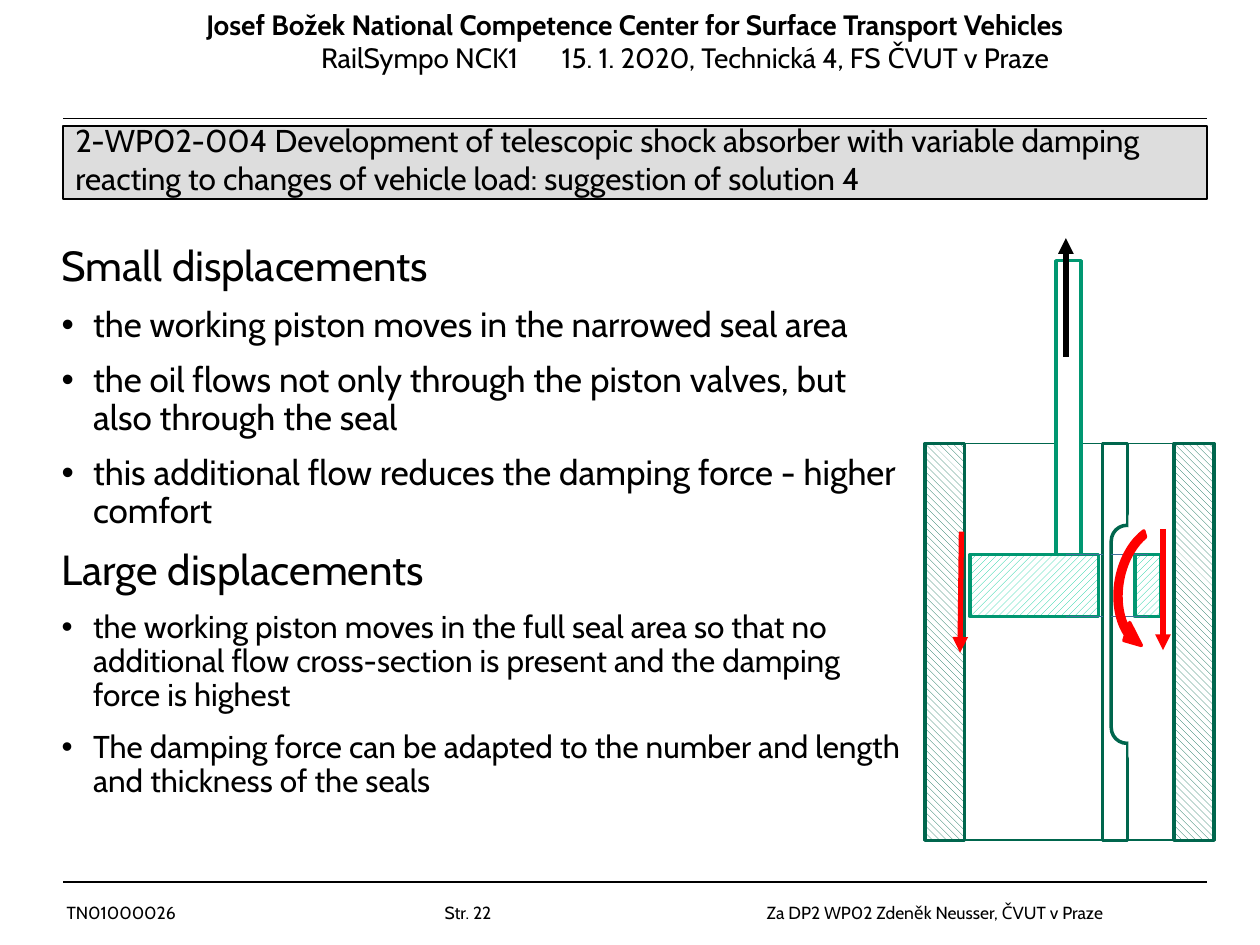
"""Build the slide on a telescopic shock absorber with variable damping."""
from lxml.etree import SubElement
from pptx import Presentation
from pptx.dml.color import RGBColor
from pptx.enum.dml import MSO_PATTERN as Pattern
from pptx.enum.shapes import MSO_CONNECTOR as Connector, MSO_SHAPE as Shape
from pptx.oxml.ns import qn
from pptx.util import Pt

FONT = "Cabin"
COLORS = {
    "black": "000000", "white": "FFFFFF", "bar": "DDDDDD", "wall": "00664D",
    "piston": "009771", "hatch": "00CC99", "edge": "41719C", "flow": "FF0000",
}
HATCHES = {
    "wall hatch": (Pattern.WIDE_DOWNWARD_DIAGONAL, "wall"),
    "piston hatch": (Pattern.WIDE_UPWARD_DIAGONAL, "hatch"),
}

HEADER = [
    dict(text="Josef Božek National Competence Center for Surface Transport Vehicles",
         size=16, bold=True, align="ctr"),
    dict(text="\tRailSympo NCK1\t15. 1. 2020, Technická 4, FS ČVUT v Praze",
         size=16, tabs=(119.5, 257)),
]
TITLE = [dict(text="2-WP02-004 Development of telescopic shock absorber with variable damping "
                   "reacting to changes of vehicle load: suggestion of solution 4", size=18)]
FOOTER = [dict(text="TN01000026\tStr. 22\tZa DP2 WP02 Zdeněk Neusser, ČVUT v Praze",
               size=10, tabs=(216, 400))]
SECTIONS = [
    ("Small displacements", 20, [
        "the working piston moves in the narrowed seal area",
        "the oil flows not only through the piston valves, but also through the seal",
        "this additional flow reduces the damping force - higher comfort",
    ]),
    ("Large displacements", 18, [
        "the working piston moves in the full seal area so that no additional flow "
        "cross-section is present and the damping force is highest",
        "The damping force can be adapted to the number and length and thickness of the seals",
    ]),
]

CYLINDER_TOP, CYLINDER_HEIGHT = 253.4, 226.8
CYLINDER_BOTTOM = CYLINDER_TOP + CYLINDER_HEIGHT
PISTON_TOP, PISTON_HEIGHT = 316.8, 35.5
PISTON_BOTTOM = PISTON_TOP + PISTON_HEIGHT
WALLS = [(left, CYLINDER_TOP, 22.7, CYLINDER_HEIGHT) for left in (671, 528.5)]
PISTON_EDGES = [((left, y), (left + 20.9, y))
                for left in (635, 609.1) for y in (PISTON_TOP, PISTON_BOTTOM)]
ARROWS = [
    ((609.1, 203.8), (609.1, 136.1), "black"),
    ((549.4, 303.8), (548.6, 373), "flow"),
    ((664.6, 302.4), (664.6, 371.5), "flow"),
]


def paint(format_part, color):
    if color is None:
        format_part.background()
    elif color in HATCHES:
        pattern, ink = HATCHES[color]
        format_part.patterned()
        format_part.pattern = pattern
        format_part.fore_color.rgb = RGBColor.from_string(COLORS[ink])
        format_part.back_color.rgb = RGBColor.from_string(COLORS["white"])
    else:
        format_part.solid()
        format_part.fore_color.rgb = RGBColor.from_string(COLORS[color])


def add_shape(slide, box, fill, line, width=2, kind=Shape.RECTANGLE, adjustments=()):
    shape = slide.shapes.add_shape(kind, *map(Pt, box))
    shape.shadow.inherit = False
    paint(shape.fill, fill)
    paint(shape.line.fill, line)
    shape.line.width = Pt(width)
    for index, value in enumerate(adjustments):
        shape.adjustments[index] = value
    return shape


def add_line(slide, start, end, color, width=1, arrow=False):
    connector = slide.shapes.add_connector(Connector.STRAIGHT, *map(Pt, start + end))
    paint(connector.line.fill, color)
    connector.line.width = Pt(width)
    if arrow:
        SubElement(connector.line._get_or_add_ln(), qn("a:tailEnd"), type="triangle")
    SubElement(connector._element.spPr, qn("a:effectLst"))


def add_paragraph(paragraph, text, size, bold=False, align="l", tabs=(), bullet=False,
                  spacing=None, before=None):
    properties = paragraph._p.get_or_add_pPr()
    properties.set("algn", align)
    if bullet:
        properties.set("marL", str(Pt(18)))
        properties.set("indent", str(-Pt(18)))
        SubElement(properties, qn("a:buFont"), typeface="Arial")
        SubElement(properties, qn("a:buChar"), char="•")
    if tabs:
        tab_list = SubElement(properties, qn("a:tabLst"))
        for position in tabs:
            SubElement(tab_list, qn("a:tab"), pos=str(Pt(position)), algn="l")
    if spacing:
        paragraph.line_spacing = spacing
    if before:
        paragraph.space_before = Pt(before)
    run = paragraph.add_run()
    run.text = text
    run.font.name, run.font.size, run.font.bold = FONT, Pt(size), bold
    run.font.color.rgb = RGBColor.from_string(COLORS["black"])


def add_text(slide, box, paragraphs):
    frame = slide.shapes.add_textbox(*map(Pt, box)).text_frame
    frame.word_wrap = True
    for index, content in enumerate(paragraphs):
        paragraph = frame.add_paragraph() if index else frame.paragraphs[0]
        add_paragraph(paragraph, **content)


def body_paragraphs():
    paragraphs = []
    for heading, size, points in SECTIONS:
        gap = dict(spacing=0.9, before=10)
        paragraphs.append(dict(text=heading, size=24, **(gap if paragraphs else {})))
        paragraphs += [dict(text=point, size=size, bullet=True, **gap) for point in points]
    return paragraphs


def add_absorber(slide):
    add_line(slide, (537.1, CYLINDER_TOP), (679.7, CYLINDER_TOP), "wall")
    for wall in WALLS:
        add_shape(slide, wall, "wall hatch", "wall")
    add_shape(slide, (603.4, 149, 14.4, 167.8), "white", "piston")
    add_line(slide, (546.5, CYLINDER_BOTTOM), (679.7, CYLINDER_BOTTOM), "wall")
    add_shape(slide, (554.4, PISTON_TOP, 73.4, PISTON_HEIGHT), "piston hatch", "piston")
    add_shape(slide, (630, CYLINDER_TOP, 14.4, CYLINDER_HEIGHT), None, "wall")
    add_shape(slide, (635, 300.2, 18, 124.6), "white", "wall",
              kind=Shape.ROUNDED_RECTANGLE, adjustments=[0.5])
    add_shape(slide, (645.8, 293, 13, 141.1), "white", "white", kind=Shape.ROUNDED_RECTANGLE)
    add_shape(slide, (648.7, PISTON_TOP, 14.4, PISTON_HEIGHT), "piston hatch", "piston")
    for start, end in PISTON_EDGES:
        add_line(slide, start, end, "edge")
    for start, end, color in ARROWS:
        add_line(slide, start, end, color, width=3, arrow=True)
    bypass = add_shape(slide, (622.1, 306.7, 81.4, 57.6), "flow", "flow",
                       kind=Shape.CIRCULAR_ARROW,
                       adjustments=[0.059, 11.423, 200.286, 123.908, 0.093])
    bypass.rotation = 280.5
    bypass._element.spPr.xfrm.set("flipH", "1")


def main():
    presentation = Presentation()
    presentation.slide_width, presentation.slide_height = Pt(720), Pt(540)
    slide = presentation.slides.add_slide(presentation.slide_layouts[6])
    for y in (504, 67.7):
        add_line(slide, (36, y), (689.8, y), "black", width=0.75)
    add_text(slide, (31, 511.9, 663.1, 19.4), FOOTER)
    add_shape(slide, (36, 72, 653.8, 41.8), "bar", "black", width=0.75)
    add_text(slide, (56.9, 0.7, 612, 46.1), HEADER)
    add_text(slide, (36, 65.5, 648, 40.3), TITLE)
    add_text(slide, (28.1, 133.2, 496.8, 406.8), body_paragraphs())
    add_absorber(slide)
    presentation.save("out.pptx")


if __name__ == "__main__":
    main()
